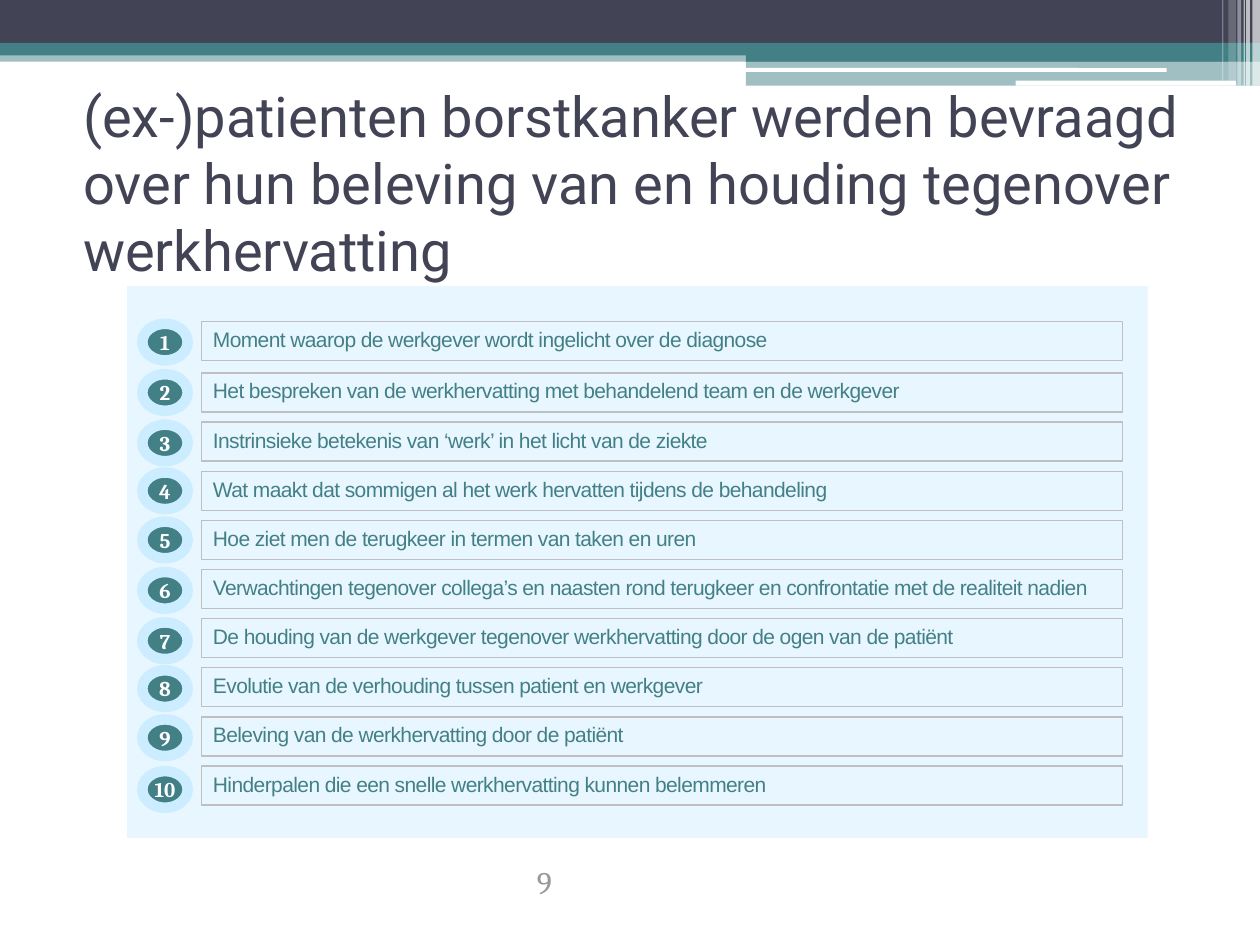
from dataclasses import dataclass

from lxml import etree
from pptx import Presentation
from pptx.dml.color import RGBColor
from pptx.enum import shapes as kinds, text as txt
from pptx.oxml import ns
from pptx.util import Inches, Pt

NAVY = RGBColor(0x42, 0x44, 0x56)
TEAL = RGBColor(0x43, 0x80, 0x86)
SKY = RGBColor(0xCC, 0xEC, 0xFF)
GREY = RGBColor(0xBF, 0xBF, 0xBF)
DIM = RGBColor(0x99, 0x99, 0x99)
WHITE = RGBColor(0xFF, 0xFF, 0xFF)
RECT = kinds.MSO_SHAPE.RECTANGLE
ROUND = kinds.MSO_SHAPE.ROUNDED_RECTANGLE
OVAL = kinds.MSO_SHAPE.OVAL


@dataclass
class Bar:
    box: tuple
    color: RGBColor
    alpha: int = 100
    kind: int = RECT


@dataclass
class Topic:
    label: str
    width: float
    badge: float  # top of the numbered oval


BARS = [
    Bar((0, 0.4, 10, 0.09), TEAL, 50),
    Bar((0, 0, 10, 0.34), NAVY),
    Bar((0, 0.34, 10, 0.1), TEAL),
    Bar((5.92, 0.39, 4.08, 0.1), TEAL),
    Bar((5.92, 0.48, 4.08, 0.2), TEAL, 50),
    Bar((5.91, 0.54, 3.35, 0.03), WHITE, kind=ROUND),
    Bar((8.06, 0.64, 1.75, 0.04), WHITE, kind=ROUND),
    Bar((9.94, 0, 0.06, 0.68), WHITE, 65),
    Bar((9.89, 0, 0.03, 0.68), WHITE, 65),
    Bar((9.87, 0, 0.01, 0.68), WHITE, 60),
    Bar((9.82, 0, 0.03, 0.68), WHITE, 40),
    Bar((9.75, 0, 0.06, 0.64), WHITE, 20),
    Bar((9.7, 0, 0.01, 0.64), WHITE, 30),
]
PANEL = Bar((1.01, 2.27, 8.1, 4.38), SKY, 44)

TOPICS = [
    Topic("Moment waarop de werkgever wordt ingelicht over de diagnose", 4.6, 2.57),
    Topic("Het bespreken van de werkhervatting met behandelend team en de werkgever",
          5.7, 2.97),
    Topic("Instrinsieke betekenis van ‘werk’ in het licht van de ziekte", 4.2, 3.37),
    Topic("Wat maakt dat sommigen al het werk hervatten tijdens de behandeling",
          5.1, 3.75),
    Topic("Hoe ziet men de terugkeer in termen van taken en uren", 4.1, 4.14),
    Topic("Verwachtingen tegenover collega’s en naasten rond terugkeer en "
          "confrontatie met de realiteit nadien", 7.2, 4.54),
    Topic("De houding van de werkgever tegenover werkhervatting door de ogen "
          "van de patiënt", 6.15, 4.94),
    Topic("Evolutie van de verhouding tussen patient en werkgever", 4.15, 5.32),
    Topic("Beleving van de werkhervatting door de patiënt", 3.5, 5.71),
    Topic("Hinderpalen die een snelle werkhervatting kunnen belemmeren", 4.65, 6.12),
]
FIRST, SECOND, PITCH = 2.55, 2.96, 0.39


def inch(box: tuple) -> list:
    return [Inches(v) for v in box]


def write(shape, words: str, font: dict, align=txt.PP_ALIGN.LEFT,
          inset=(0, 0, 0, 0), **frame):
    """Put one formatted run in the shape; frame holds text frame settings."""
    body = shape.text_frame
    sides = ("margin_left", "margin_top", "margin_right", "margin_bottom")
    for name, value in {**dict(zip(sides, inch(inset))), **frame}.items():
        setattr(body, name, value)
    para = body.paragraphs[0]
    para.alignment = align
    run = para.add_run()
    run.text = words
    style = dict(font)
    run.font.color.rgb = style.pop("color")
    for name, value in style.items():
        setattr(run.font, name, value)
    return run


def draw_bar(pool, bar: Bar) -> None:
    shape = pool.add_shape(bar.kind, *inch(bar.box))
    shape.shadow.inherit = False
    shape.line.fill.background()
    shape.fill.solid()
    shape.fill.fore_color.rgb = bar.color
    if bar.alpha < 100:
        tint = shape.fill._xPr.find(".//" + ns.qn("a:srgbClr"))
        etree.SubElement(tint, ns.qn("a:alpha"), val=str(bar.alpha * 1000))


def draw_row(pool, topic: Topic, top: float) -> None:
    group = pool.add_group_shape().shapes
    frame = group.add_shape(RECT, *inch((1.6, top, 7.31, 0.31)))
    frame.shadow.inherit = False
    frame.fill.background()
    frame.line.color.rgb = GREY
    frame.line.width = Pt(0.75)
    label = group.add_textbox(*inch((1.65, top, topic.width, 0.28)))
    run = write(label, topic.label, dict(name="Arial", size=Pt(12), color=TEAL),
                inset=(0.04,) * 4, word_wrap=True,
                auto_size=txt.MSO_AUTO_SIZE.SHAPE_TO_FIT_TEXT)
    run._r.get_or_add_rPr().set("spc", "-33")


def draw_badge(pool, number: int, top: float) -> None:
    oval = pool.add_shape(OVAL, *inch((1.13, top, 0.36, 0.29)))
    oval.shadow.inherit = False
    oval.fill.solid()
    oval.fill.fore_color.rgb = TEAL
    oval.line.color.rgb = SKY
    oval.line.width = Pt(6)
    write(oval, str(number),
          dict(name="Cambria", size=Pt(12), bold=True, color=WHITE),
          txt.PP_ALIGN.CENTER, word_wrap=False,
          vertical_anchor=txt.MSO_ANCHOR.MIDDLE)


def place_title(slide) -> None:
    title = slide.shapes.title
    slide.shapes._spTree.append(title._element)  # in front of the panel
    sides = ("left", "top", "width", "height")
    for name, value in zip(sides, inch((0.56, 0.86, 9, 1.17))):
        setattr(title, name, value)
    write(title, "(ex-)patienten borstkanker werden bevraagd over hun beleving "
          "van en houding tegenover werkhervatting",
          dict(name="Roboto", size=Pt(32), color=NAVY),
          inset=(0.1, 0.05, 0.1, 0.05), word_wrap=True,
          auto_size=txt.MSO_AUTO_SIZE.NONE,
          vertical_anchor=txt.MSO_ANCHOR.MIDDLE)


def main() -> None:
    deck = Presentation()
    deck.slide_width, deck.slide_height = Inches(10), Inches(7.5)
    slide = deck.slides.add_slide(deck.slide_layouts[5])
    pool = slide.shapes
    for bar in BARS + [PANEL]:
        draw_bar(pool, bar)
    place_title(slide)
    for i, topic in enumerate(TOPICS):
        draw_row(pool, topic, SECOND + (i - 1) * PITCH if i else FIRST)
        draw_badge(pool, i + 1, topic.badge)
    page = pool.add_textbox(*inch((4.11, 7.03, 0.35, 0.16)))
    write(page, "9", dict(name="Cambria", size=Pt(18), color=DIM),
          txt.PP_ALIGN.RIGHT, (0.08, 0.04, 0.08, 0.04), word_wrap=True,
          vertical_anchor=txt.MSO_ANCHOR.BOTTOM)
    deck.save("out.pptx")


if __name__ == "__main__":
    main()
